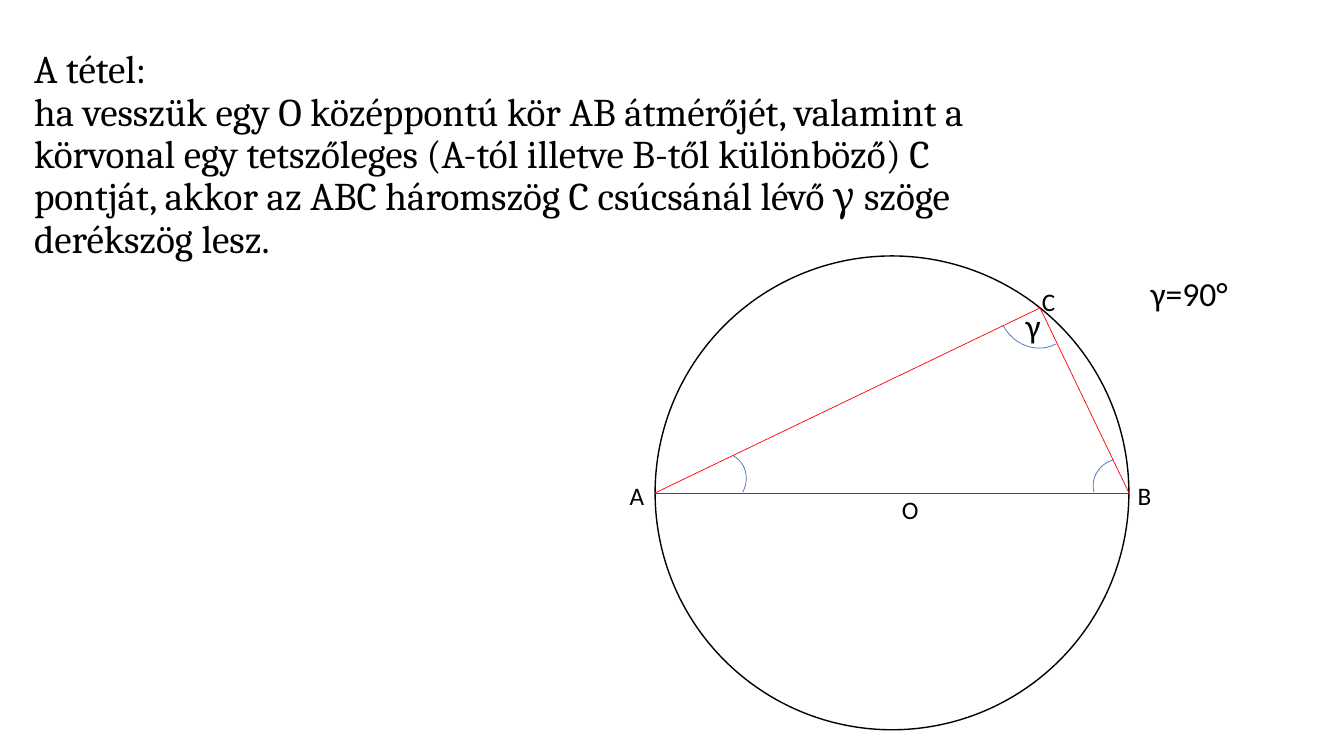
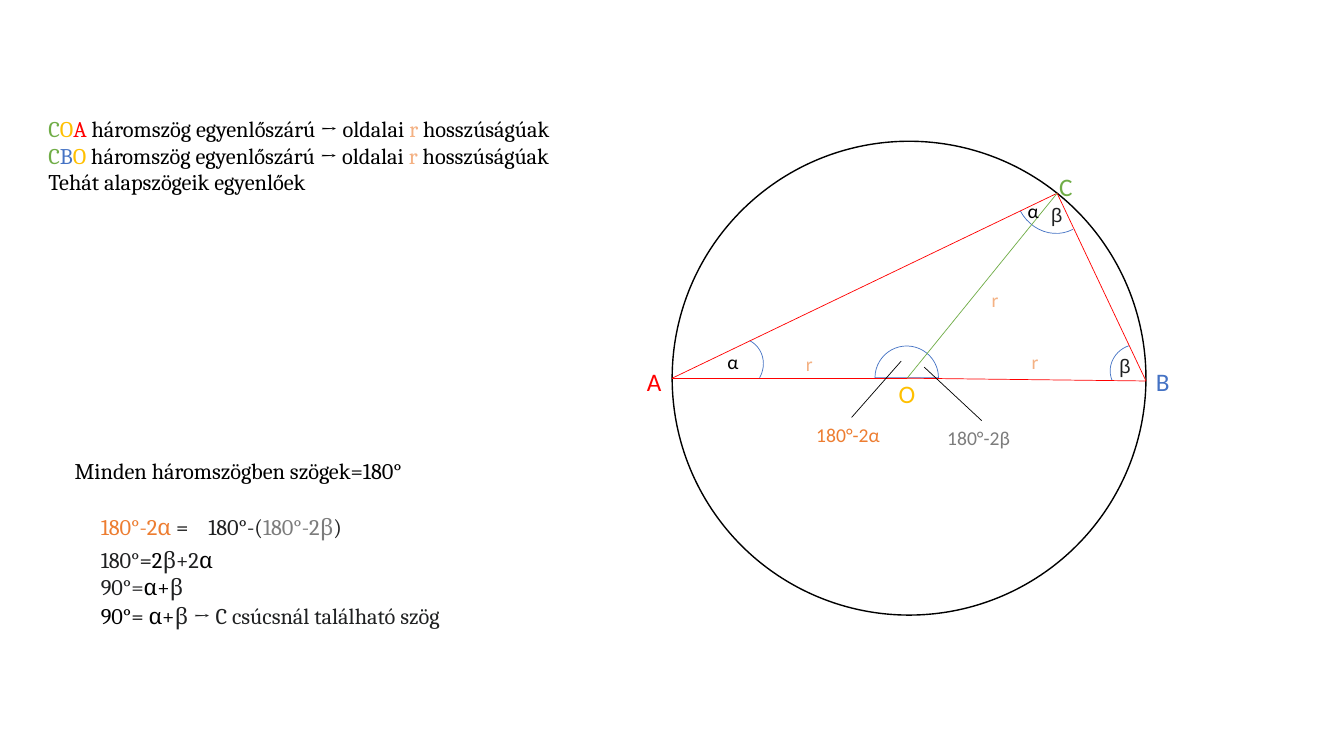
"""Build two slides on Thales's theorem: the statement and its proof."""
from lxml import etree
from pptx import Presentation
from pptx.dml.color import RGBColor
from pptx.enum.shapes import MSO_CONNECTOR, MSO_SHAPE
from pptx.enum.text import MSO_ANCHOR
from pptx.oxml.ns import qn
from pptx.util import Cm, Pt

ARC, PIE, OVAL = MSO_SHAPE.ARC, MSO_SHAPE.CHORD.PIE, MSO_SHAPE.OVAL
STRAIGHT = MSO_CONNECTOR.STRAIGHT
TOP, MIDDLE = MSO_ANCHOR.TOP, MSO_ANCHOR.MIDDLE

COLORS = {
    "black": "000000", "ink": "202122", "white": "FFFFFF", "red": "FF0000",
    "blue": "4472C4", "green": "70AD47", "gold": "FFC000",
    "orange": "ED7D31", "gray": "7C7C7C", "peach": "F4B183",
}
BODY, LABEL, GREEK = "Cambria", "Calibri", "Arial"

DIAMETER = 11.94
POINT_A, POINT_B, POINT_C, POINT_O = (0, 5.97), (DIAMETER, 5.97), (9.7, 1.31), (5.92, 5.97)
POINT_B_LOW = (DIAMETER, 6.04)

ANGLE_A = (0.99, 4.95, 1.3, 1.37, 28.7)
ANGLE_B = (11.07, 5.08, 1.3, 1.37, 254)
ANGLE_C = (8.66, 0.28, 1.9, 2.06, 152.1)
ANGLE_O = (5.11, 5.16, 1.6, 1.6, 38.6)

EQUAL_SIDES = [(" háromszög egyenlőszárú → oldalai ", "black"), ("r", "peach"),
               (" hosszúságúak", "black")]

THEOREM = {
    "origin": (16.51, 6.45),
    "angles": [(ARC, ANGLE_B, ()), (ARC, ANGLE_A, ()), (ARC, ANGLE_C, ())],
    "lines": [(POINT_A, POINT_B, "red"), (POINT_A, POINT_C, "red"), (POINT_C, POINT_B, "red")],
    "labels": [
        (-0.89, 5.54, 0.64, 18, LABEL, "A", "black"),
        (11.91, 5.54, 0.64, 18, LABEL, "B", "black"),
        (9.5, 0.64, 0.81, 18, LABEL, "C", "black"),
        (5.97, 5.89, 1.32, 18, LABEL, "O", "black"),
        (9.09, 1.12, 0.61, 24, LABEL, "γ", "black"),
        (12.24, 0.3, 2.72, 24, LABEL, "γ=90°", "black"),
    ],
    "texts": [((0.61, 0.33, 25.83, 7.19), 28, MIDDLE, 0.9, [[(
        "A tétel:\vha vesszük egy O középpontú kör AB átmérőjét, valamint a körvonal "
        "egy tetszőleges (A-tól illetve B-től különböző) C pontját, akkor az ABC "
        "háromszög C csúcsánál lévő γ szöge derékszög lesz.", "black")]])],
}

PROOF = {
    "origin": (16.94, 3.56),
    "angles": [(ARC, ANGLE_A, (160.88, 0.8)), (PIE, ANGLE_O, (84.91, 192.93)),
               (ARC, ANGLE_B, (157.87, 214.55)), (ARC, ANGLE_C, ())],
    "lines": [
        (POINT_A, POINT_C, "red"), (POINT_C, POINT_B_LOW, "red"),
        (POINT_A, POINT_O, "red"), (POINT_O, POINT_C, "green"),
        (POINT_O, POINT_B_LOW, "red"),
        ((5.77, 5.54), (4.52, 6.96), "black"), ((6.35, 5.69), (7.8, 7.04), "black"),
    ],
    "labels": [
        (-0.89, 5.54, 0.64, 18, LABEL, "A", "red"),
        (11.94, 5.54, 0.64, 18, LABEL, "B", "blue"),
        (9.5, 0.62, 0.81, 18, LABEL, "C", "green"),
        (5.46, 5.84, 1.32, 18, LABEL, "O", "gold"),
        (1.14, 5.13, 0.81, 14, LABEL, "α", "black"),
        (8.71, 1.32, 0.81, 14, LABEL, "α", "black"),
        (9.3, 1.42, 0.79, 14, GREEK, "β", "ink"),
        (11.02, 5.23, 0.79, 14, GREEK, "β", "ink"),
        (7.8, 3.56, 0.79, 14, LABEL, "r", "peach"),
        (3.12, 5.18, 0.79, 14, LABEL, "r", "peach"),
        (8.81, 5.13, 0.79, 14, LABEL, "r", "peach"),
        (3.38, 6.96, 2.26, 14, LABEL, "180°-2α", "orange"),
        (6.68, 7.04, 2.26, 14, LABEL, "180°-2β", "gray"),
    ],
    "texts": [
        ((0.97, 2.77, 14.99, 2.39), 16, TOP, None, [
            [("C", "green"), ("O", "gold"), ("A", "red"), *EQUAL_SIDES],
            [("C", "green"), ("B", "blue"), ("O", "gold"), *EQUAL_SIDES],
            [("Tehát alapszögeik egyenlőek", "black")]]),
        ((1.63, 11.4, 10.24, 0.94), 16, TOP, None,
         [[("Minden háromszögben szögek=180°", "black")]]),
        ((2.29, 12.8, 3.07, 0.94), 16, TOP, None,
         [[("180°-2α ", "orange"), ("=", "black")]]),
        ((5, 12.8, 4.29, 0.94), 16, TOP, None,
         [[("180°-(", "ink"), ("180°-2β", "gray"), (")", "ink")]]),
        ((2.29, 13.64, 7.16, 1.63), 16, TOP, None, [
            [("180°", "ink"), ("=2", "black"), ("β+2", "ink"), ("α", "black")],
            [("90°=", "ink"), ("α+", "black"), ("β", "ink")]]),
        ((2.29, 15.04, 10.46, 0.94), 16, TOP, None,
         [[("90°= α+", "black"), ("β → C csúcsnál található szög", "ink")]]),
    ],
}


def color(name):
    return RGBColor.from_string(COLORS[name])


def add_text(slide, box, size, font, paragraphs, anchor=TOP, spacing=None):
    frame = slide.shapes.add_textbox(*map(Cm, box)).text_frame
    frame.word_wrap = True
    frame.vertical_anchor = anchor
    for index, runs in enumerate(paragraphs):
        paragraph = frame.add_paragraph() if index else frame.paragraphs[0]
        paragraph.line_spacing = spacing
        for text, tint in runs:
            for part_index, part in enumerate(text.split("\v")):
                if part_index:
                    paragraph.add_line_break()
                run = paragraph.add_run()
                run.text = part
                run.font.name = font
                run.font.size = Pt(size)
                run.font.color.rgb = color(tint)


def add_outline(slide, kind, box, tint, width):
    shape = slide.shapes.add_shape(kind, *map(Cm, box))
    shape.shadow.inherit = False
    shape.fill.background()
    shape.line.color.rgb = color(tint)
    shape.line.width = Pt(width)
    return shape


def add_line(slide, start, end, tint):
    line = slide.shapes.add_connector(STRAIGHT, *map(Cm, (*start, *end)))
    line.line.color.rgb = color(tint)
    line.line.width = Pt(0.5)
    etree.SubElement(line.element.spPr, qn("a:effectLst"))


def add_figure(slide, figure):
    left, top = figure["origin"]

    def place(point):
        return left + point[0], top + point[1]

    for kind, (x, y, width, height, turn), adjustments in figure["angles"]:
        angle = add_outline(slide, kind, (*place((x, y)), width, height), "blue", 0.5)
        angle.rotation = turn
        for index, value in enumerate(adjustments):
            angle.adjustments[index] = value
        if kind == PIE:
            angle.fill.solid()
            angle.fill.fore_color.rgb = color("white")
    add_outline(slide, OVAL, (left, top, DIAMETER, DIAMETER), "black", 1)
    for start, end, tint in figure["lines"]:
        add_line(slide, place(start), place(end), tint)
    for x, y, width, size, font, text, tint in figure["labels"]:
        add_text(slide, (*place((x, y)), width, size * 0.06), size, font, [[(text, tint)]])


def main():
    presentation = Presentation()
    presentation.slide_width, presentation.slide_height = Cm(33.87), Cm(19.05)
    for content in (THEOREM, PROOF):
        slide = presentation.slides.add_slide(presentation.slide_layouts[6])
        add_figure(slide, content)
        for box, size, anchor, spacing, paragraphs in content["texts"]:
            add_text(slide, box, size, BODY, paragraphs, anchor, spacing)
    presentation.save("out.pptx")


if __name__ == "__main__":
    main()
